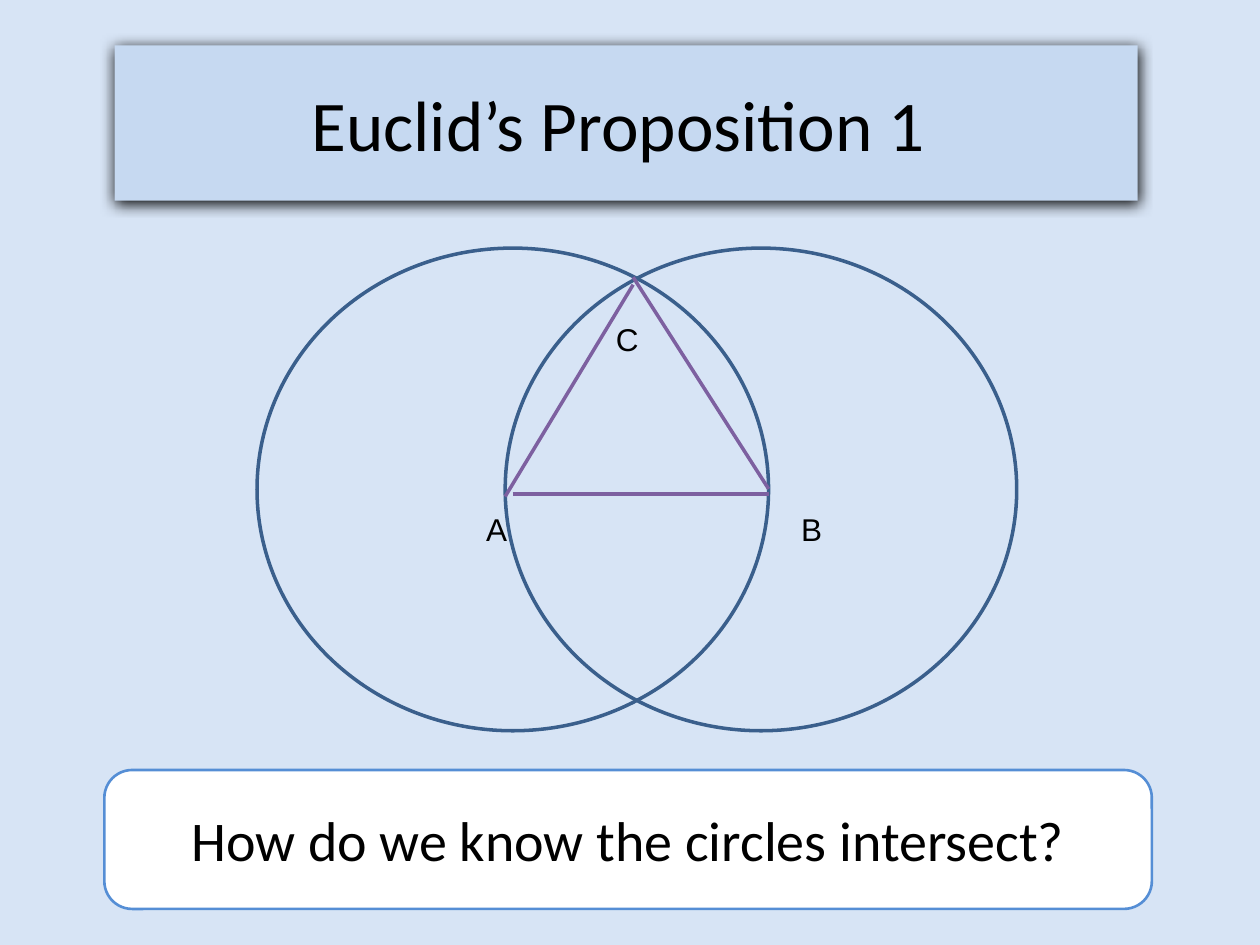
from lxml import etree
from pptx import Presentation
from pptx.dml.color import RGBColor
from pptx.enum.shapes import MSO_CONNECTOR as Connector, MSO_SHAPE as Shape
from pptx.enum.text import MSO_ANCHOR as Anchor, MSO_AUTO_SIZE as AutoSize, PP_ALIGN as Align
from pptx.oxml import parse_xml
from pptx.oxml.ns import nsdecls, qn
from pptx.util import Pt

BACKGROUND = RGBColor(0xD7, 0xE4, 0xF5)
PANEL = RGBColor(0xC6, 0xD9, 0xF1)
WHITE = RGBColor(0xFF, 0xFF, 0xFF)
BLACK = RGBColor(0x00, 0x00, 0x00)
BORDER = RGBColor(0x55, 0x8E, 0xD5)
CIRCLE = RGBColor(0x3A, 0x5F, 0x8C)
TRIANGLE = RGBColor(0x7D, 0x60, 0xA0)


def write(shape, text, font, size, align):
    frame = shape.text_frame
    frame.word_wrap = True
    para = frame.paragraphs[0]
    para.alignment = align
    span = para.add_run()
    span.text = text
    for name, value in {"name": font, "size": Pt(size)}.items():
        setattr(span.font, name, value)
    span.font.color.rgb = BLACK


def outline(shape, color, width):
    shape.line.color.rgb = color
    shape.line.width = Pt(width)


deck = Presentation()
deck.slide_width, deck.slide_height = Pt(720), Pt(540)
page = deck.slides.add_slide(deck.slide_layouts[5])
page.background.fill.solid()
page.background.fill.fore_color.rgb = BACKGROUND

# Title panel with a soft shadow
title = page.shapes.title
place = {"left": 65.5, "top": 26, "width": 584.6, "height": 88.6}
for name, value in place.items():
    setattr(title, name, Pt(value))
title.fill.solid()
title.fill.fore_color.rgb = PANEL
write(title, "Euclid’s Proposition 1 ", "Calibri", 40.7, Align.CENTER)
title.text_frame.auto_size = AutoSize.NONE
title.text_frame.vertical_anchor = Anchor.MIDDLE
title._element.spPr.append(parse_xml(
    f'<a:effectLst {nsdecls("a")}>'
    f'<a:outerShdw blurRad="{Pt(8.5)}" dist="{Pt(1)}" dir="5400000" algn="ctr" rotWithShape="0">'
    '<a:srgbClr val="000000"/></a:outerShdw></a:effectLst>'))

# Question
question = page.shapes.add_shape(Shape.ROUNDED_RECTANGLE, Pt(59.6), Pt(440), Pt(598.6), Pt(79.4))
question.adjustments[0] = 0.2
question.shadow.inherit = False
question.fill.solid()
question.fill.fore_color.rgb = WHITE
outline(question, BORDER, 1.5)
write(question, "How do we know the circles intersect?", "Calibri", 32, Align.CENTER)
question.text_frame.vertical_anchor = Anchor.MIDDLE

# Two overlapping circles
for left in (146.9, 288.7):
    circle = page.shapes.add_shape(Shape.OVAL, Pt(left), Pt(141.8), Pt(292.3), Pt(275.8))
    circle.shadow.inherit = False
    circle.fill.background()
    outline(circle, CIRCLE, 2)

# Triangle sides AB, CA, CB
for side in ((293, 282.2, 439.2, 282.2), (361.8, 162.7, 288.7, 283.7), (361.8, 158.4, 439.2, 279.4)):
    line = page.shapes.add_connector(Connector.STRAIGHT, *map(Pt, side))
    outline(line, TRIANGLE, 2)
    etree.SubElement(line._element.spPr, qn("a:effectLst"))

# Corner labels
for letter, left, top in (("A", 270.7, 288), ("B", 450.7, 288), ("C", 344.9, 179.3)):
    label = page.shapes.add_textbox(Pt(left), Pt(top), Pt(33.8), Pt(28.8))
    write(label, letter, "Arial", 18, Align.LEFT)
    label.text_frame.auto_size = AutoSize.SHAPE_TO_FIT_TEXT

deck.save("out.pptx")
